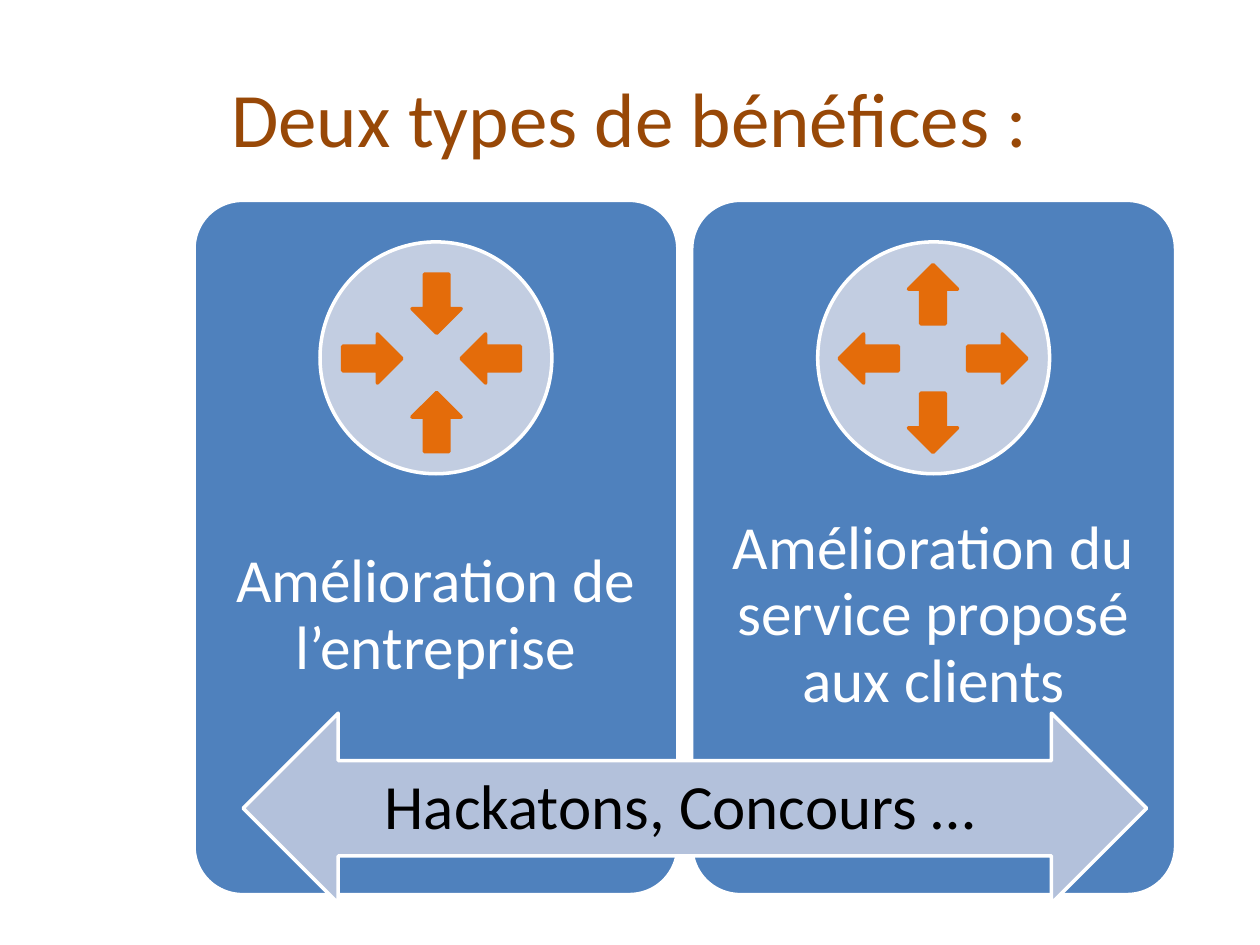
from dataclasses import dataclass
from math import cos, radians, sin

from pptx import Presentation
from pptx.dml.color import RGBColor
from pptx.enum.shapes import MSO_SHAPE as Shape
from pptx.enum.text import MSO_ANCHOR as Anchor, PP_ALIGN as Align
from pptx.util import Inches, Pt

COLS, ROWS = 100, 75


@dataclass(frozen=True)
class Theme:
    font: str = "Calibri"
    title: str = "984807"
    panel: str = "4F81BD"
    circle: str = "C2CDE1"
    banner: str = "B3C1DB"
    accent: str = "E46C0A"
    light: str = "FFFFFF"
    dark: str = "000000"
    title_size: int = 44
    panel_size: int = 35
    banner_size: int = 36
    line_width: int = 2


class SlideBuilder:
    """Draws on one slide; every box is (left, top, width, height) in grid units."""

    def __init__(self, prs, theme):
        self.s = prs.slides.add_slide(prs.slide_layouts[6])
        self.theme = theme
        self.col, self.row = prs.slide_width / COLS, prs.slide_height / ROWS

    def place(self, box):
        return [round(v * unit) for v, unit in zip(box, (self.col, self.row) * 2)]

    def shape(self, kind, box, fill, line=None, rotation=0, adjust=None):
        sp = self.s.shapes.add_shape(kind, *self.place(box))
        sp.shadow.inherit = False
        sp.rotation = rotation
        sp.fill.solid()
        sp.fill.fore_color.rgb = RGBColor.from_string(fill)
        sp.line.color.rgb = RGBColor.from_string(line or self.theme.light)
        sp.line.width = Pt(self.theme.line_width)
        if adjust is not None:
            sp.adjustments[0] = adjust

    def text(self, box, words, size, color, inset=None, spacing=1.0):
        tf = self.s.shapes.add_textbox(*self.place(box)).text_frame
        frame = {"word_wrap": True, "vertical_anchor": Anchor.MIDDLE}
        if inset is not None:
            frame |= {f"margin_{side}": Inches(inset)
                      for side in ("left", "top", "right", "bottom")}
        p = tf.paragraphs[0]
        r = p.add_run()
        r.text = words
        r.font.color.rgb = RGBColor.from_string(color)
        formats = (
            (tf, frame),
            (p, {"alignment": Align.CENTER, "line_spacing": spacing}),
            (r.font, {"name": self.theme.font, "size": Pt(size)}),
        )
        for target, values in formats:
            for name, value in values.items():
                setattr(target, name, value)

    def panel(self, left, words):
        t = self.theme
        self.shape(Shape.ROUNDED_RECTANGLE, (left, 15.9, 38.4, 55.1), t.panel, adjust=0.1)
        self.text((left, 37.9, 38.4, 22), words, t.panel_size, t.light, inset=0.27, spacing=0.9)
        self.shape(Shape.OVAL, (left + 10, 19.2, 18.4, 18.4), t.circle)

    def arrow_ring(self, upright, level, radius, turn):
        """Four arrows, clockwise from the left, around the centres of the two axes."""
        width, height = 4.7, 3.9
        for angle in range(0, 360, 90):
            x, y = upright if angle % 180 else level
            x -= radius * cos(radians(angle))
            y -= radius * sin(radians(angle))
            self.shape(Shape.LEFT_ARROW, (x - width / 2, y - height / 2, width, height),
                       self.theme.accent, self.theme.accent, (angle + turn) % 360)


def main():
    prs = Presentation()
    prs.slide_width, prs.slide_height = Inches(10), Inches(7.5)
    theme = Theme()
    slide = SlideBuilder(prs, theme)

    slide.text((5, 3, 90, 12.5), "Deux types de bénéfices :", theme.title_size, theme.title)
    slide.panel(15.4, "Amélioration de l’entreprise")
    slide.panel(54.9, "Amélioration du service proposé aux clients")

    slide.shape(Shape.LEFT_RIGHT_ARROW, (19.3, 56.6, 71.7, 15.1), theme.banner)
    slide.text((26.4, 60.3, 55.1, 7.1), "Hackatons, Concours …", theme.banner_size, theme.dark)

    slide.arrow_ring((34.65, 28.8), (34.25, 28.45), radius=4.7, turn=180)
    slide.arrow_ring((74.05, 28.45), (74.05, 28.45), radius=5.1, turn=0)

    prs.save("out.pptx")


if __name__ == "__main__":
    main()
